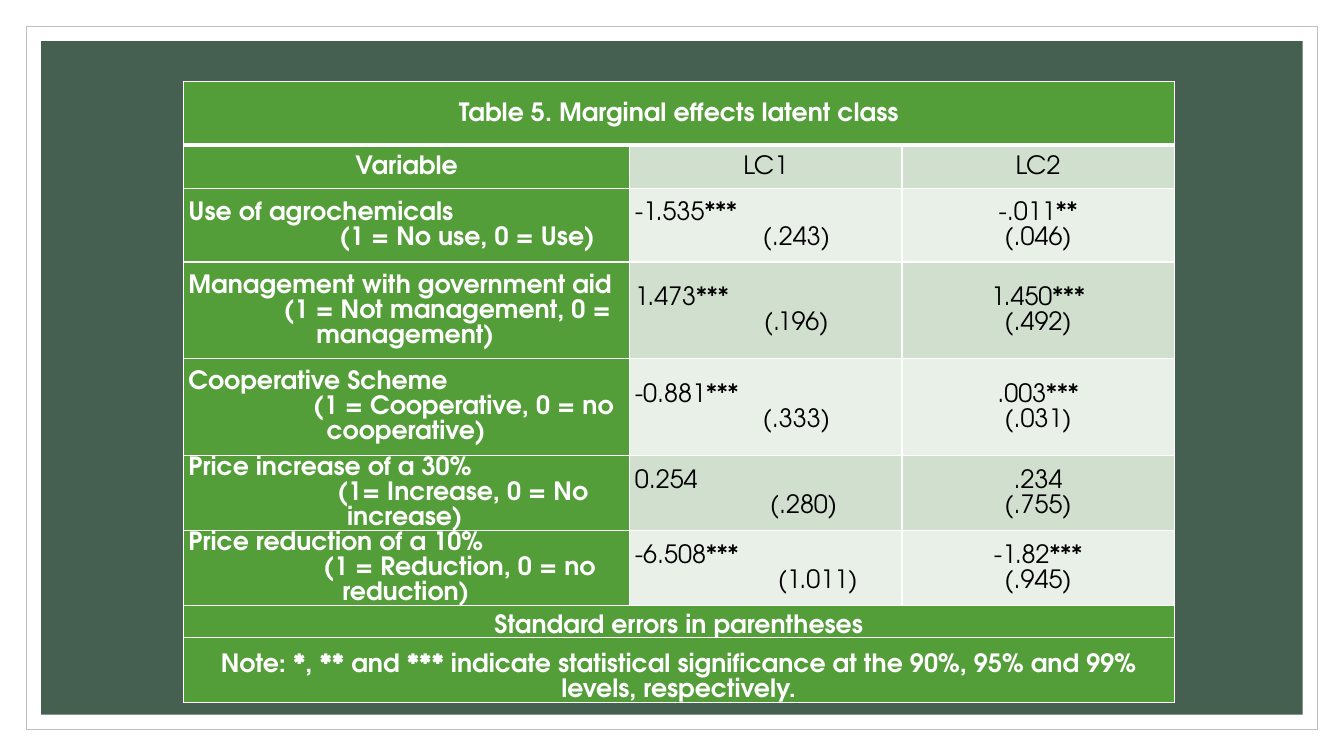
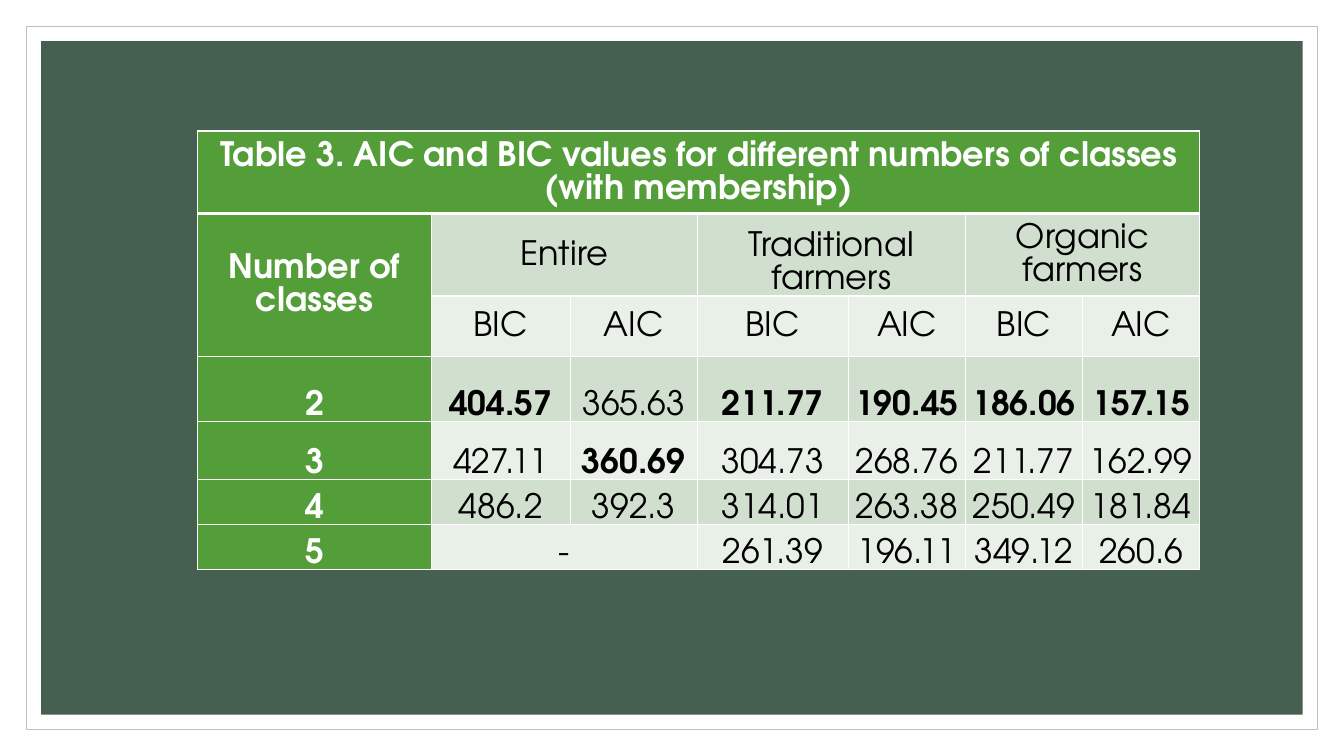
from lxml.etree import SubElement
from pptx import Presentation
from pptx.dml.color import RGBColor
from pptx.enum.shapes import MSO_SHAPE
from pptx.enum.text import MSO_ANCHOR, PP_ALIGN
from pptx.oxml.ns import qn
from pptx.util import Cm, Pt

WIDE, HIGH = 33.87, 19.05
WHITE, BLACK, GRAY = "FFFFFF", "000000", "BFBFBF"
PINE, GREEN, SAGE, MIST = "455F51", "549E39", "D1DFCE", "E9F0E8"
FONT = "TeX Gyre Adventor"


def tint(code):
    """Return the colour for a hex string."""
    return RGBColor.from_string(code)


class Deck:
    """Hold the shared style and the current slide."""

    def __init__(self):
        """Start an empty wide deck."""
        self.file = Presentation()
        self.file.slide_width = Cm(WIDE)
        self.file.slide_height = Cm(HIGH)
        self.slide = None

    def page(self):
        """Add a slide with its thin frame and dark panel."""
        self.slide = self.file.slides.add_slide(self.file.slide_layouts[6])
        self.panel(0.66, WHITE, GRAY)
        self.panel(1.04, PINE)

    def panel(self, gap, fill, line=None):
        """Draw a rectangle set in from every slide edge."""
        shape = self.slide.shapes.add_shape(
            MSO_SHAPE.RECTANGLE, Cm(gap), Cm(gap),
            Cm(WIDE - 2 * gap), Cm(HIGH - 2 * gap))
        shape.shadow.inherit = False
        shape.fill.solid()
        shape.fill.fore_color.rgb = tint(fill)
        if line:
            shape.line.color.rgb = tint(line)
            shape.line.width = Pt(0.5)
        else:
            shape.line.fill.background()

    def edge(self, cell, top, base):
        """Give a cell white borders of the given top and bottom width."""
        props = cell._tc.get_or_add_tcPr()
        for side, size in (("L", 1), ("R", 1), ("T", top), ("B", base)):
            line = SubElement(props, qn("a:ln" + side), w=str(Pt(size)))
            fill = SubElement(line, qn("a:solidFill"))
            SubElement(fill, qn("a:srgbClr"), val=WHITE)

    def cell(self, cell, text, size, fill, bold, low):
        """Fill one cell and format its text."""
        cell.fill.solid()
        cell.fill.fore_color.rgb = tint(fill)
        cell.margin_left = cell.margin_right = Cm(0.13)
        cell.margin_top = cell.margin_bottom = 0
        cell.vertical_anchor = MSO_ANCHOR.BOTTOM if low else MSO_ANCHOR.MIDDLE
        cell.text_frame.text = text or ""
        for par in cell.text_frame.paragraphs:
            par.alignment = PP_ALIGN.CENTER
            par.line_spacing = 1.07
            par.font.size = Pt(size)
            for run in par.runs:
                font = run.font
                font.name, font.size, font.bold = FONT, Pt(size), bold
                font.color.rgb = tint(WHITE if fill == GREEN else BLACK)

    def table(self, left, top, cols, rows, data, size, low, spans, bold=()):
        """Add a table with green heads, banded rows and merged spans."""
        grid = self.slide.shapes.add_table(
            len(rows), len(cols), Cm(left), Cm(top),
            Cm(sum(cols)), Cm(sum(rows))).table
        for col, wide in zip(grid.columns, cols):
            col.width = Cm(wide)
        for row, high in zip(grid.rows, rows):
            row.height = Cm(high)
        for r, line in enumerate(data):
            for c, text in enumerate(line):
                head = r == 0 or c == 0
                fill = GREEN if head else SAGE if r % 2 else MIST
                cell = grid.cell(r, c)
                self.edge(cell, 3 if r == 1 else 1, 3 if r == 0 else 1)
                self.cell(cell, text, size, fill,
                          head or (r, c) in bold, r >= low)
        for r, c, down, right in spans:
            grid.cell(r, c).merge(grid.cell(down, right))
        return grid

    def step(self, cell, first, rest):
        """Align a cell left and indent its second paragraph."""
        head, tail = cell.text_frame.paragraphs
        head.alignment = tail.alignment = PP_ALIGN.LEFT
        props = tail._p.get_or_add_pPr()
        props.set("marL", str(Cm(rest)))
        props.set("indent", str(Cm(first - rest)))


def effects(deck):
    """Build the slide of marginal effects."""
    deck.page()
    data = [
        ["Table 5. Marginal effects latent class", None, None],
        ["Variable", "LC1", "LC2"],
        ["Use of agrochemicals\n(1 = No use, 0 = Use)",
         "-1.535***\n(.243)", "-.011**\n(.046)"],
        ["Management with government aid\n"
         "(1 = Not management, 0 = management)",
         "1.473***\n(.196)", "1.450***\n(.492)"],
        ["Cooperative Scheme\n(1 = Cooperative, 0 = no cooperative)",
         "-0.881***\n(.333)", ".003***\n(.031)"],
        ["Price increase of a 30%\n(1= Increase, 0 = No increase)",
         "0.254\n(.280)", ".234\n(.755)"],
        ["Price reduction of a 10%\n(1 = Reduction, 0 = no reduction)",
         "-6.508***\n(1.011)", "-1.82***\n(.945)"],
        ["Standard errors in parentheses", None, None],
        ["Note: *, ** and *** indicate statistical signiﬁcance at the 90%, "
         "95% and 99% levels, respectively.", None, None],
    ]
    grid = deck.table(
        4.62, 2.06, [11.25, 6.86, 6.86],
        [1.6, 1.09, 1.85, 2.44, 2.44, 1.63, 1.85, 0.81, 1.63],
        data, 18, 7, [(r, 0, r, 2) for r in (0, 7, 8)])
    steps = [(3.8, 3.8, 3.22), (2.4, 3.22, 3.25), (3.14, 3.48, 3.22),
             (3.75, 4, 3.4), (3.4, 3.88, 3.6)]
    for r, (first, rest, error) in enumerate(steps, 2):
        deck.step(grid.cell(r, 0), first, rest)
        deck.step(grid.cell(r, 1), error, error)


def classes(deck):
    """Build the slide of fit values by number of classes."""
    deck.page()
    data = [
        ["Table 3. AIC and BIC values for diﬀerent numbers of classes "
         "(with membership)"] + [None] * 6,
        ["Number of classes", "Entire", None, "Traditional\nfarmers", None,
         "Organic farmers", None],
        [None] + ["BIC", "AIC"] * 3,
        ["2", "404.57", "365.63", "211.77", "190.45", "186.06", "157.15"],
        ["3", "427.11", "360.69", "304.73", "268.76", "211.77", "162.99"],
        ["4", "486.2", "392.3", "314.01", "263.38", "250.49", "181.84"],
        ["5", "-", None, "261.39", "196.11", "349.12", "260.6"],
    ]
    spans = [(0, 0, 0, 6), (1, 0, 2, 0), (6, 1, 6, 2)]
    spans += [(1, c, 1, c + 1) for c in (1, 3, 5)]
    bold = [(3, c) for c in (1, 3, 4, 5, 6)] + [(4, 2)]
    grid = deck.table(
        4.98, 3.3, [5.89, 3.5, 3.2, 3.81, 2.95, 2.95, 2.95],
        [2.08, 2.08, 1.52, 1.65, 1.45, 1.14, 1.14],
        data, 24, 3, spans, bold)
    grid.cell(1, 3).vertical_anchor = MSO_ANCHOR.BOTTOM


def main():
    """Build and save the deck."""
    deck = Deck()
    effects(deck)
    classes(deck)
    deck.file.save("out.pptx")


if __name__ == "__main__":
    main()
